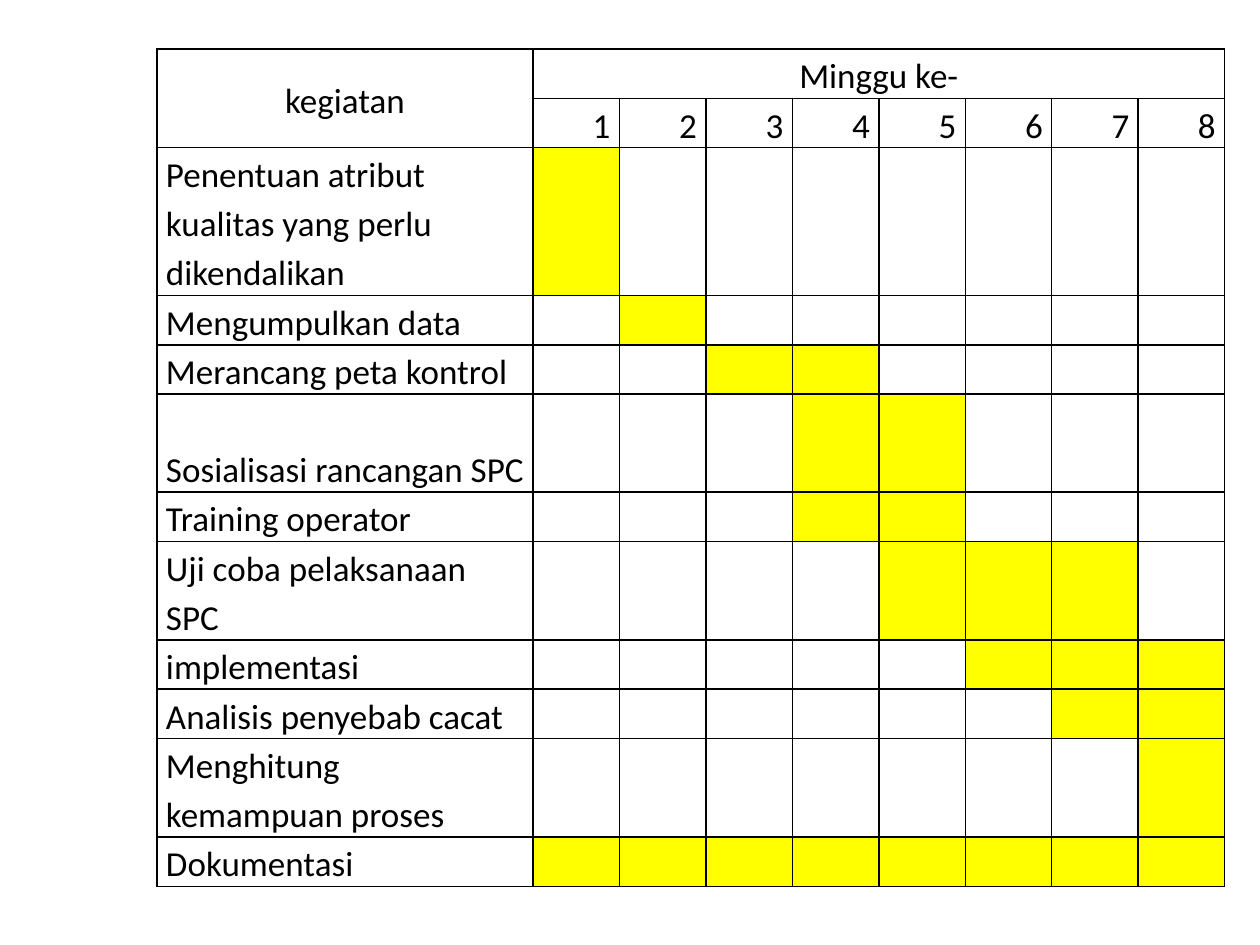
import pptx
import pptx.util
import pptx.dml.color
import pptx.enum.text
import pptx.oxml
import pptx.oxml.ns

SCALE = 914400 / 126  # EMU in one px
COLORS = {"ink": "000000", "bar": "FFFF00"}
FONT = "Calibri"
WEEKS = 8
LEFT, TOP = 157, 49
NAME_W, WEEKS_W, LINE_H = 376, 692, 49
ALIGN = pptx.enum.text.PP_ALIGN
ANCHOR = pptx.enum.text.MSO_ANCHOR

# Task, lines of text, first week, last week
TASKS = [
    ("Penentuan atribut kualitas yang perlu dikendalikan", 3, 1, 1),
    ("Mengumpulkan data", 1, 2, 2),
    ("Merancang peta kontrol", 1, 3, 4),
    ("Sosialisasi rancangan SPC", 2, 4, 5),
    ("Training operator", 1, 4, 5),
    ("Uji coba pelaksanaan SPC", 2, 5, 7),
    ("implementasi", 1, 6, 8),
    ("Analisis penyebab cacat", 1, 7, 8),
    ("Menghitung kemampuan proses", 2, 8, 8),
    ("Dokumentasi", 1, 1, 8),
]


def px(n):
    return pptx.util.Emu(round(n * SCALE))


def color(name):
    return pptx.dml.color.RGBColor.from_string(COLORS[name])


def add_border(cell):
    props = cell._tc.get_or_add_tcPr()
    for side in ("lnL", "lnR", "lnT", "lnB"):
        props.append(pptx.oxml.parse_xml(
            f'<a:{side} {pptx.oxml.ns.nsdecls("a")} w="12700"><a:solidFill>'
            f'<a:srgbClr val="{COLORS["ink"]}"/></a:solidFill></a:{side}>'))


def style_cell(cell):
    cell.margin_left = cell.margin_right = px(9)
    cell.margin_top = cell.margin_bottom = 0
    add_border(cell)
    cell.fill.background()


def write(cell, text, align=ALIGN.LEFT, anchor=ANCHOR.BOTTOM):
    cell.vertical_anchor = anchor
    para = cell.text_frame.paragraphs[0]
    para.alignment = align
    para.line_spacing = 1.15
    run = para.add_run()
    run.text = text
    run.font.name = FONT
    run.font.size = pptx.util.Pt(20)
    run.font.color.rgb = color("ink")


def add_grid(slide):
    lines = [1, 1] + [task[1] for task in TASKS]
    frame = slide.shapes.add_table(
        len(lines), WEEKS + 1, px(LEFT), px(TOP),
        px(NAME_W + WEEKS_W), px(LINE_H * sum(lines)))
    table = frame.table
    table.first_row = table.horz_banding = False
    table.columns[0].width = px(NAME_W)
    for week in range(1, WEEKS + 1):
        table.columns[week].width = px(WEEKS_W / WEEKS)
    for row, count in zip(table.rows, lines):
        row.height = px(LINE_H * count)
    for cell in table.iter_cells():
        style_cell(cell)
    return table


def fill_head(table):
    table.cell(0, 0).merge(table.cell(1, 0))
    table.cell(0, 1).merge(table.cell(0, WEEKS))
    write(table.cell(0, 0), "kegiatan", ALIGN.CENTER, ANCHOR.MIDDLE)
    write(table.cell(0, 1), "Minggu ke-", ALIGN.CENTER, ANCHOR.MIDDLE)
    for week in range(1, WEEKS + 1):
        write(table.cell(1, week), str(week), ALIGN.RIGHT)


def fill_tasks(table):
    for row, (name, _, first, last) in enumerate(TASKS, start=2):
        anchor = ANCHOR.MIDDLE if row == 2 else ANCHOR.BOTTOM
        write(table.cell(row, 0), name, anchor=anchor)
        for week in range(first, last + 1):
            fill = table.cell(row, week).fill
            fill.solid()
            fill.fore_color.rgb = color("bar")


def main():
    deck = pptx.Presentation()
    deck.slide_width, deck.slide_height = px(1260), px(945)
    slide = deck.slides.add_slide(deck.slide_layouts[6])  # blank layout
    # Schedule: header rows, then one row per task
    table = add_grid(slide)
    fill_head(table)
    fill_tasks(table)
    deck.save("out.pptx")


if __name__ == "__main__":
    main()
